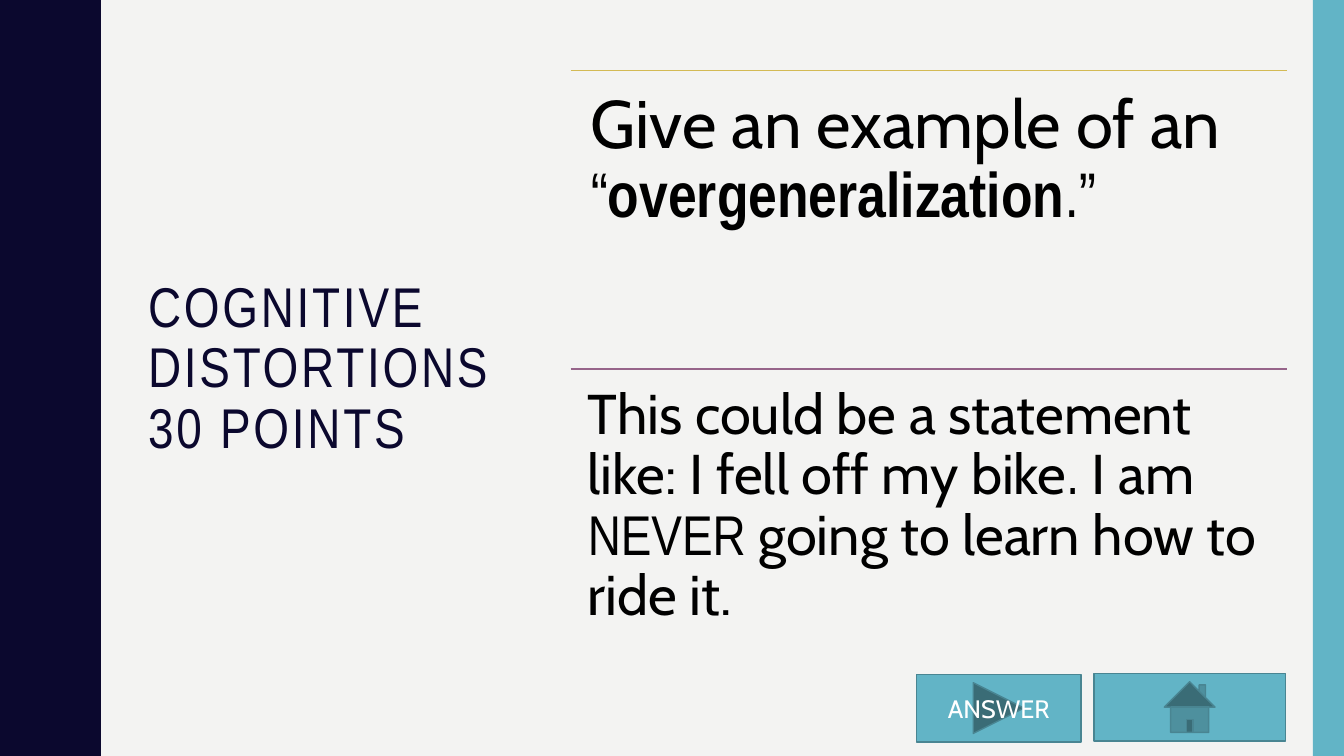
from lxml import etree
from pptx import Presentation
from pptx.dml.color import RGBColor
from pptx.enum.shapes import MSO_CONNECTOR, MSO_SHAPE
from pptx.enum.text import MSO_ANCHOR, PP_ALIGN
from pptx.oxml.ns import qn
from pptx.util import Inches, Pt

STRAIGHT = MSO_CONNECTOR.STRAIGHT
RECTANGLE = MSO_SHAPE.RECTANGLE
HOME = MSO_SHAPE.ACTION_BUTTON_HOME
NEXT = MSO_SHAPE.ACTION_BUTTON_FORWARD_OR_NEXT
TOP, MIDDLE = MSO_ANCHOR.TOP, MSO_ANCHOR.MIDDLE
LEFT, CENTER = PP_ALIGN.LEFT, PP_ALIGN.CENTER

NAVY, TEAL, TEAL_EDGE = "0B082E", "62B4C6", "498592"
NARROW, CABIN = "Arial Narrow", "Cabin"


def paint(target, color):
    """Give a fill, or a font's or line's fill, one solid colour."""
    target.solid()
    target.fore_color.rgb = RGBColor.from_string(color)


def write(shape, lines, color="000000", anchor=TOP, align=LEFT,
          inset=None, line_spacing=0.9, tracking=0):
    """Write lines of (text, font, size, bold) runs into one paragraph."""
    frame = shape.text_frame
    frame.word_wrap = True
    frame.vertical_anchor = anchor
    if inset is not None:
        frame.margin_left = frame.margin_right = Inches(inset)
        frame.margin_top = frame.margin_bottom = Inches(inset)
    paragraph = frame.paragraphs[0]
    paragraph.alignment = align
    paragraph.line_spacing = line_spacing
    for number, line in enumerate(lines):
        if number:
            paragraph.add_line_break()
        for text, font, size, bold in line:
            run = paragraph.add_run()
            run.text = text
            run.font.name, run.font.size, run.font.bold = font, Pt(size), bold
            paint(run.font.fill, color)
            if tracking:
                run.font._element.set("spc", str(tracking * 100))


prs = Presentation()
prs.slide_width, prs.slide_height = Inches(13.33), Inches(7.5)
slide = prs.slides.add_slide(prs.slide_layouts[6])
shapes = slide.shapes
paint(slide.background.fill, "F3F3F2")

# Wavy left band: half a wave going out, then mirrored, five times
WAVE = 1.5
half_wave = [(0.78, 0), (0.78, 0.07), (0.79, 0.14), (0.8, 0.2), (0.81, 0.25),
             (0.83, 0.29), (0.87, 0.38), (0.91, 0.46), (0.93, 0.5),
             (0.95, 0.55), (0.96, 0.61), (0.97, 0.68), (0.97, 0.75)]
full_wave = half_wave + [(x, WAVE - y) for x, y in reversed(half_wave[:-1])]
edge = [(x, y + WAVE * i) for i in range(5) for x, y in full_wave]
builder = shapes.build_freeform(0, 0, scale=Inches(1))
builder.add_line_segments(edge + [(0, 7.5)], close=True)
wavy_band = builder.convert_to_shape()

right_band = shapes.add_shape(RECTANGLE, Inches(13.02), 0, Inches(0.31), Inches(7.5))
for band, color in ((wavy_band, NAVY), (right_band, TEAL)):
    band.shadow.inherit = False
    paint(band.fill, color)
    band.line.fill.background()

# Navigation buttons
for kind, left, top, width, label in ((HOME, 10.85, 6.68, 1.9, ""),
                                      (NEXT, 9.09, 6.69, 1.63, "ANSWER")):
    button = shapes.add_shape(kind, Inches(left), Inches(top), Inches(width), Inches(0.67))
    button.shadow.inherit = False
    paint(button.fill, TEAL)
    paint(button.line.fill, TEAL_EDGE)
    button.line.width = Pt(1)
    if label:
        write(button, [[(label, CABIN, 18, False)]], color="FFFFFF",
              anchor=MIDDLE, align=CENTER, line_spacing=1.0)

title = shapes.add_textbox(Inches(1.37), Inches(0.71), Inches(3.7), Inches(5.91))
write(title, [[("COGNITIVE DISTORTIONS", NARROW, 40, False)],
              [("30 POINTS", NARROW, 40, False)]],
      color=NAVY, anchor=MIDDLE, tracking=2)

# Question and answer, each under its own rule
question = [("Give an example of an ", CABIN, 48, False),
            ("“", NARROW, 45, False),
            ("overgeneralization", NARROW, 45, True),
            (".”", NARROW, 45, False)]
answer = [("This could be a statement like: I fell off my bike", CABIN, 40, False),
          (".", NARROW, 40, False),
          (" I am ", CABIN, 40, False),
          ("NEVER", NARROW, 40, False),
          (" going to learn how to ride it.", CABIN, 40, False)]
PANEL_LEFT, PANEL_WIDTH, PANEL_HEIGHT = 5.66, 7.1, 2.96
for i, (runs, rule_color, inset) in enumerate(((question, "D3BA55", 0.2),
                                               (answer, "96648A", 0.17))):
    top = Inches(0.7 + PANEL_HEIGHT * i)
    rule = shapes.add_connector(STRAIGHT, Inches(PANEL_LEFT), top,
                                Inches(PANEL_LEFT + PANEL_WIDTH), top)
    paint(rule.line.fill, rule_color)
    rule.line.width = Pt(1)
    etree.SubElement(rule._element.spPr, qn("a:effectLst"))
    panel = shapes.add_textbox(Inches(PANEL_LEFT), top,
                               Inches(PANEL_WIDTH), Inches(PANEL_HEIGHT))
    write(panel, [runs], inset=inset)

prs.save("out.pptx")
